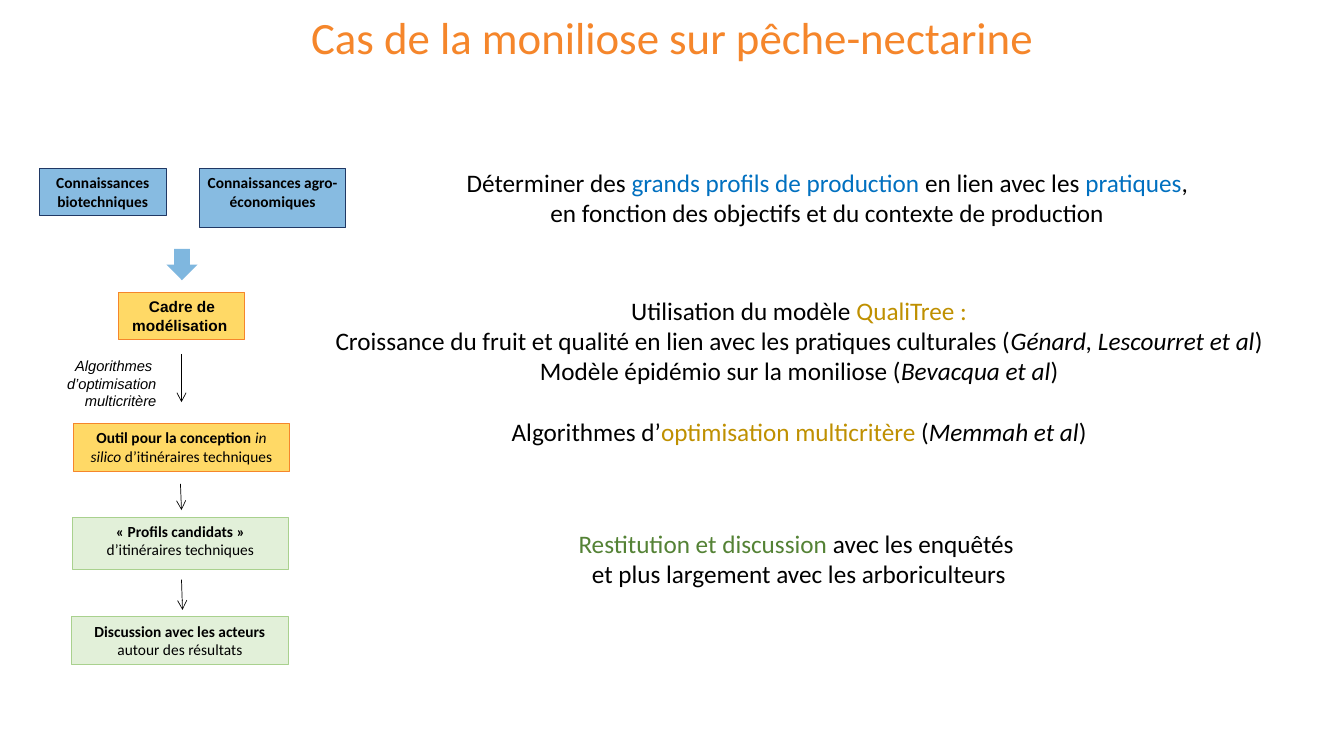
"""Build the slide on brown rot of peach and nectarine."""
from dataclasses import dataclass

from lxml.etree import SubElement as Sub
from pptx import Presentation as Deck
from pptx.dml.color import RGBColor as Rgb
from pptx.enum.shapes import MSO_CONNECTOR as Link, MSO_SHAPE as Form
from pptx.enum.text import MSO_ANCHOR as Anchor, MSO_AUTO_SIZE as Fit, PP_ALIGN as Align
from pptx.oxml.ns import qn
from pptx.util import Inches, Pt

CELL = Inches(0.1)
BLACK = Rgb(0x00, 0x00, 0x00)
ORANGE = Rgb(0xF5, 0x86, 0x2B)
BLUE = Rgb(0x00, 0x70, 0xC0)
NAVY = Rgb(0x20, 0x38, 0x64)
YELLOW = Rgb(0xFF, 0xD9, 0x66)
GOLD = Rgb(0xBF, 0x90, 0x00)
PALE = Rgb(0xE2, 0xF0, 0xD9)
LEAF = Rgb(0xA9, 0xD1, 0x8E)
GREEN = Rgb(0x54, 0x82, 0x35)


@dataclass(frozen=True)
class Span:
    """A stretch of text in one style."""
    text: str
    ink: Rgb = BLACK
    bold: bool = False
    slant: bool = False


@dataclass(frozen=True)
class Area:
    """A place on the grid, in columns and rows."""
    col: float
    row: float
    wide: float
    high: float

    def emu(self) -> list[int]:
        """Give the place in slide units."""
        return [round(n * CELL) for n in (self.col, self.row, self.wide, self.high)]


@dataclass(frozen=True)
class Step:
    """A box of the flow chart."""
    area: Area
    fill: Rgb
    edge: Rgb
    spans: list[Span]
    font: str = "Calibri"
    alpha: int = 100
    inset: float = 1


@dataclass(frozen=True)
class Note:
    """A free text with one list of spans per paragraph."""
    area: Area
    lines: list[list[Span]]
    size: float = 18
    font: str = "Calibri"
    align: Align = Align.CENTER
    wrap: bool = False
    gap: float = 0


@dataclass(frozen=True)
class Arrow:
    """A thin arrow between two steps."""
    col: float
    row: float
    end_col: float
    end_row: float


STEPS = [
    Step(Area(3.9, 16.7, 12.6, 4.7), BLUE, NAVY,
         [Span("Connaissances biotechniques", bold=True)], alpha=47),
    Step(Area(11.8, 29, 12.5, 4.7), YELLOW, ORANGE,
         [Span("Cadre de modélisation ", bold=True)], font="Arial"),
    Step(Area(19.8, 16.7, 14.5, 5.9), BLUE, NAVY,
         [Span("Connaissances agro-économiques", bold=True)], alpha=47, inset=0.8),
    Step(Area(7.3, 42, 21.4, 4.8), YELLOW, ORANGE,
         [Span("Outil pour la conception ", bold=True), Span("in silico ", slant=True),
          Span("d’itinéraires techniques")]),
    Step(Area(7.2, 51.3, 21.4, 5.2), PALE, LEAF,
         [Span("« Profils candidats » ", bold=True), Span("d’itinéraires techniques")]),
    Step(Area(7.1, 61.2, 21.5, 4.7), PALE, LEAF,
         [Span("Discussion avec les acteurs ", bold=True), Span("autour des résultats")]),
]
ARROWS = [Arrow(18, 35.1, 18, 39.9), Arrow(17.9, 48, 18, 50.6), Arrow(18, 57.5, 18.1, 60.5)]
NOTES = [
    Note(Area(0.8, 0.5, 131.8, 6.4),
         [[Span("Cas de la moniliose sur pêche-nectarine", ORANGE)]], size=32, wrap=True),
    Note(Area(0, 34.9, 16.5, 6.3),
         [[Span("Algorithmes \vd’optimisation multicritère", slant=True)]],
         size=10.5, font="Arial", align=Align.RIGHT, wrap=True),
    Note(Area(31.7, 28.8, 95.1, 16.2), [
        [Span("Utilisation du modèle "), Span("QualiTree :", GOLD)],
        [Span("Croissance du fruit et qualité en lien avec les pratiques culturales ("),
         Span("Génard, Lescourret et al", slant=True), Span(")")],
        [Span("Modèle épidémio sur la moniliose ("), Span("Bevacqua et al", slant=True),
         Span(")")],
        [Span("Algorithmes d’"), Span("optimisation multicritère ", GOLD), Span("("),
         Span("Memmah et al", slant=True), Span(")")],
    ], gap=22),
    Note(Area(44.8, 16.1, 74.5, 7.1), [[
        Span("Déterminer des "), Span("grands profils de production ", BLUE),
        Span("en lien avec les "), Span("pratiques", BLUE),
        Span(",\ven fonction des objectifs et du contexte de production")]]),
    Note(Area(56.1, 51.9, 46.3, 7.1), [[
        Span("Restitution et discussion ", GREEN),
        Span("avec les enquêtés \vet plus largement avec les arboriculteurs")]]),
]


def write(para, spans: list[Span], size: float, font: str, align: Align) -> None:
    """Fill a paragraph with styled spans."""
    para.alignment = align
    for span in spans:
        for rank, part in enumerate(span.text.split("\v")):
            if rank:
                para.add_line_break()
            run = para.add_run()
            run.text = part
            run.font.size = Pt(size)
            run.font.name = font
            run.font.color.rgb = span.ink
            run.font.bold = span.bold
            run.font.italic = span.slant


def block(slide, form: Form, area: Area, fill: Rgb, alpha: int):
    """Draw a filled shape without a line."""
    shape = slide.shapes.add_shape(form, *area.emu())
    shape.shadow.inherit = False
    shape.fill.solid()
    shape.fill.fore_color.rgb = fill
    shape.line.fill.background()
    if alpha < 100:
        tint = shape.fill._xPr.find(qn("a:solidFill"))[0]
        Sub(tint, qn("a:alpha"), val=str(alpha * 1000))
    return shape


def draw_step(slide, step: Step) -> None:
    """Draw a box of the flow chart."""
    shape = block(slide, Form.RECTANGLE, step.area, step.fill, step.alpha)
    shape.line.color.rgb = step.edge
    shape.line.width = Pt(0.75)
    frame = shape.text_frame
    frame.word_wrap = True
    frame.vertical_anchor = Anchor.TOP
    frame.margin_left = frame.margin_right = round(step.inset * CELL)
    write(frame.paragraphs[0], step.spans, 11, step.font, Align.CENTER)


def draw_arrow(slide, arrow: Arrow) -> None:
    """Draw a thin black arrow."""
    ends = (arrow.col, arrow.row, arrow.end_col, arrow.end_row)
    line = slide.shapes.add_connector(Link.STRAIGHT, *(round(n * CELL) for n in ends))
    line.line.color.rgb = BLACK
    line.line.width = Pt(0.5)
    Sub(line.line._get_or_add_ln(), qn("a:tailEnd"), type="arrow")
    Sub(line._element.spPr, qn("a:effectLst"))


def draw_note(slide, note: Note) -> None:
    """Draw a free text, with the gap before its last paragraph."""
    frame = slide.shapes.add_textbox(*note.area.emu()).text_frame
    frame.word_wrap = note.wrap
    frame.auto_size = Fit.SHAPE_TO_FIT_TEXT
    for rank, spans in enumerate(note.lines):
        para = frame.add_paragraph() if rank else frame.paragraphs[0]
        write(para, spans, note.size, note.font, note.align)
    if note.gap:
        para.space_before = Pt(note.gap)


def main() -> None:
    """Build and save the deck."""
    deck = Deck()
    deck.slide_width, deck.slide_height = Inches(13.33), Inches(7.5)
    slide = deck.slides.add_slide(deck.slide_layouts[6])
    for step in STEPS:
        draw_step(slide, step)
    block(slide, Form.DOWN_ARROW, Area(16.5, 24.7, 3.1, 3.1), BLUE, 50)
    for arrow in ARROWS:
        draw_arrow(slide, arrow)
    for note in NOTES:
        draw_note(slide, note)
    deck.save("out.pptx")


if __name__ == "__main__":
    main()
